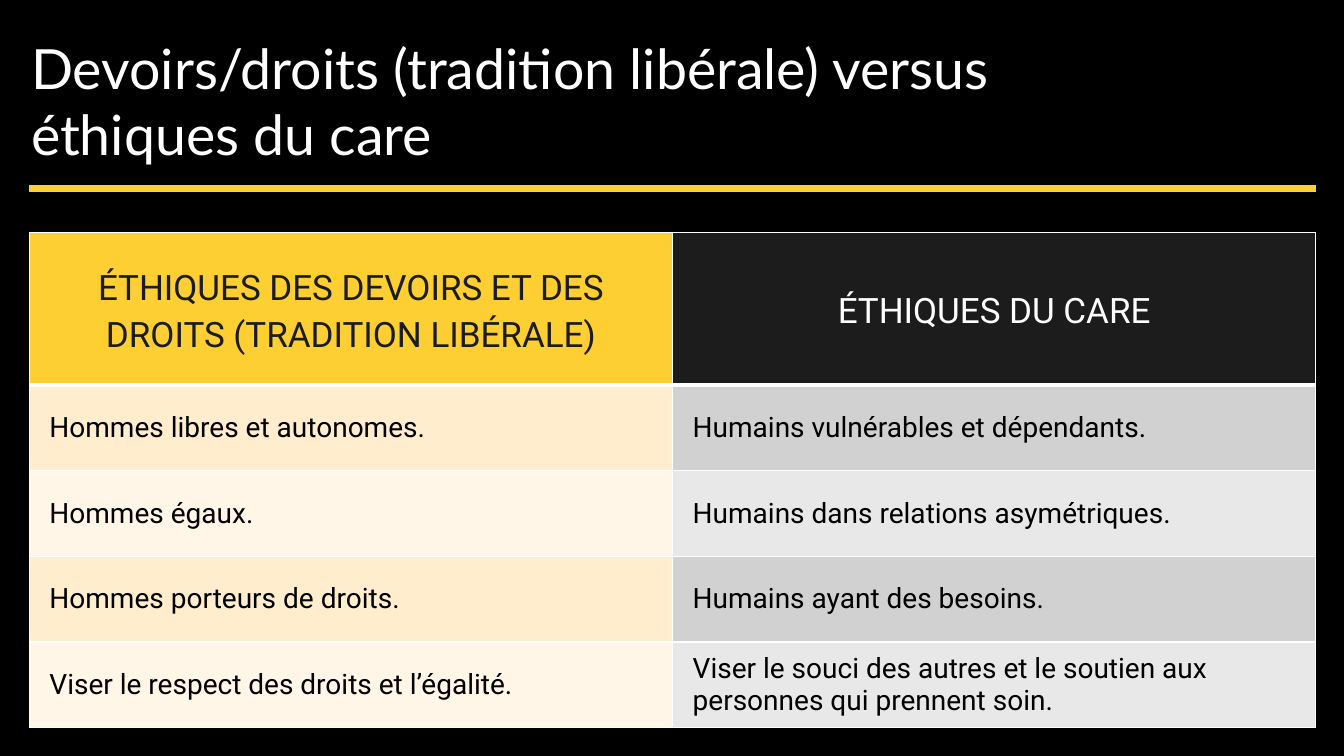
from dataclasses import dataclass

from lxml.etree import SubElement
from pptx import Presentation
from pptx.dml.color import RGBColor
from pptx.enum.shapes import MSO_CONNECTOR
from pptx.enum.text import MSO_ANCHOR, PP_ALIGN
from pptx.oxml.ns import qn
from pptx.util import Inches, Pt


@dataclass(frozen=True)
class Theme:
    """Colours, fonts and type sizes of the slide."""
    black: str = "000000"
    white: str = "FFFFFF"
    yellow: str = "FECF33"
    charcoal: str = "1C1C1C"
    bands: tuple = (("FFEDCE", "D1D1D1"), ("FFF6E8", "E8E8E8"))
    title_font: str = "Lato"
    table_font: str = "Roboto"
    title_size: float = 39.6
    header_size: float = 25
    body_size: float = 20


THEME = Theme()
TITLE = "Devoirs/droits (tradition libérale) versus éthiques du care"
HEADERS = (
    ("ÉTHIQUES DES DEVOIRS ET DES DROITS (TRADITION LIBÉRALE)", THEME.yellow, THEME.charcoal),
    ("ÉTHIQUES DU CARE", THEME.charcoal, THEME.white),
)
COMPARISONS = (
    ("Hommes libres et autonomes.", "Humains vulnérables et dépendants."),
    ("Hommes égaux.", "Humains dans relations asymétriques."),
    ("Hommes porteurs de droits.", "Humains ayant des besoins."),
    ("Viser le respect des droits et l’égalité.",
     "Viser le souci des autres et le soutien aux personnes qui prennent soin."),
)


def style_font(para, name, size, color):
    """Set the font of a whole paragraph."""
    para.font.name = name
    para.font.size = Pt(size)
    para.font.bold = False
    para.font.color.rgb = RGBColor.from_string(color)


def add_title(page):
    """Add the slide title."""
    box = page.shapes.add_textbox(Inches(0.21), Inches(0.28), Inches(11.49), Inches(1.43))
    frame = box.text_frame
    frame.word_wrap = True
    frame.vertical_anchor = MSO_ANCHOR.MIDDLE
    frame.text = TITLE
    style_font(frame.paragraphs[0], THEME.title_font, THEME.title_size, THEME.white)


def add_rule(page):
    """Add the yellow line under the title."""
    rule = page.shapes.add_connector(
        MSO_CONNECTOR.STRAIGHT, Inches(0.29), Inches(1.87), Inches(13.05), Inches(1.87))
    rule.line.color.rgb = RGBColor.from_string(THEME.yellow)
    rule.line.width = Pt(4.5)
    SubElement(rule._element.spPr, qn("a:effectLst"))


def set_borders(cell, top, bottom):
    """Draw white borders around a cell, with widths in points."""
    properties = cell._tc.get_or_add_tcPr()
    for side, width in (("L", 1), ("R", 1), ("T", top), ("B", bottom)):
        line = SubElement(properties, qn(f"a:ln{side}"), w=str(Pt(width)))
        fill = SubElement(line, qn("a:solidFill"))
        SubElement(fill, qn("a:srgbClr"), val=THEME.white)


def fill_cell(cell, text, color):
    """Write a cell's text, fill it and return its paragraph."""
    cell.fill.solid()
    cell.fill.fore_color.rgb = RGBColor.from_string(color)
    cell.vertical_anchor = MSO_ANCHOR.MIDDLE
    cell.text = text
    return cell.text_frame.paragraphs[0]


def fill_header(cell, text, color, text_color):
    """Fill a centred column heading."""
    set_borders(cell, 1, 3)
    para = fill_cell(cell, text, color)
    para.alignment = PP_ALIGN.CENTER
    para.line_spacing = 1.15
    para.space_after = Pt(8)
    style_font(para, THEME.table_font, THEME.header_size, text_color)


def fill_body(cell, text, color, top):
    """Fill a cell of the comparison."""
    set_borders(cell, top, 1)
    para = fill_cell(cell, text, color)
    cell.margin_left, cell.margin_right = Inches(0.2), Inches(0.09)
    cell.margin_top = cell.margin_bottom = Inches(0.04)
    style_font(para, THEME.table_font, THEME.body_size, THEME.black)


def add_comparison(page):
    """Add the two-column comparison table."""
    table = page.shapes.add_table(
        len(COMPARISONS) + 1, len(HEADERS),
        Inches(0.29), Inches(2.31), Inches(12.76), Inches(4.91)).table
    table.horz_banding = False
    for index, row in enumerate(table.rows):
        row.height = Inches(0.85 if index else 1.51)
    for column, header in enumerate(HEADERS):
        fill_header(table.cell(0, column), *header)
    for index, texts in enumerate(COMPARISONS):
        for column, text in enumerate(texts):
            color = THEME.bands[index % 2][column]
            fill_body(table.cell(index + 1, column), text, color, 1 if index else 3)


def main():
    """Build the slide and save it."""
    deck = Presentation()
    deck.slide_width, deck.slide_height = Inches(13.33), Inches(7.5)
    page = deck.slides.add_slide(deck.slide_layouts[6])
    page.background.fill.solid()
    page.background.fill.fore_color.rgb = RGBColor.from_string(THEME.black)
    add_comparison(page)
    add_rule(page)
    add_title(page)
    deck.save("out.pptx")


if __name__ == "__main__":
    main()
